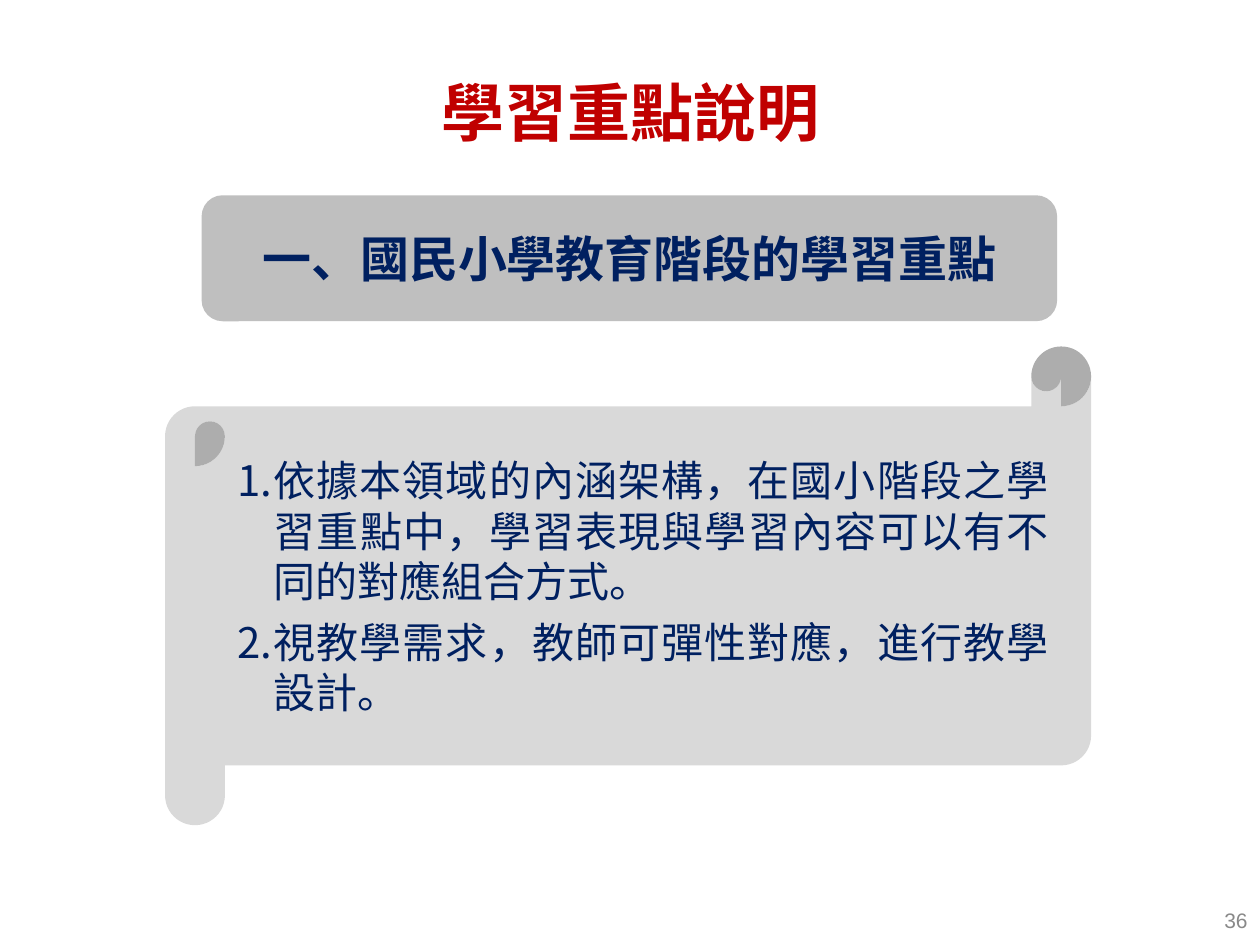
import pptx
import pptx.util
import pptx.dml.color
import pptx.enum.shapes
import pptx.enum.text
import pptx.oxml.ns
import lxml.etree

Inches = pptx.util.Inches
RGB = pptx.dml.color.RGBColor
Align = pptx.enum.text.PP_ALIGN
Kind = pptx.enum.shapes.MSO_SHAPE

RED = RGB(0xC0, 0x00, 0x00)
NAVY = RGB(0x00, 0x20, 0x60)
GRAY = RGB(0xBF, 0xBF, 0xBF)
PALE = RGB(0xD9, 0xD9, 0xD9)
DIM = RGB(0x89, 0x89, 0x89)
HAN = "Noto Sans CJK SC"

POINTS = [
    "1.依據本領域的內涵架構，在國小階段之學習重點中，學習表現與學習內容可以有不同的對應組合方式。",
    "2.視教學需求，教師可彈性對應，進行教學設計。",
]


def place(shape, left, top, width, height):
    shape.left, shape.top = Inches(left), Inches(top)
    shape.width, shape.height = Inches(width), Inches(height)


def style(para, size, color, align, bold=False, face=HAN):
    para.alignment = align
    font = para.font
    font.size = pptx.util.Pt(size)
    font.bold = bold
    font.name = face
    font.color.rgb = color
    props = para._p.pPr.find(pptx.oxml.ns.qn("a:defRPr"))
    east = lxml.etree.SubElement(props, pptx.oxml.ns.qn("a:ea"))
    east.set("typeface", face)


def hang(para, depth):
    props = para._p.get_or_add_pPr()
    props.set("marL", str(Inches(depth)))
    props.set("indent", str(-Inches(depth)))


def center(frame):
    frame.word_wrap = True
    frame.vertical_anchor = pptx.enum.text.MSO_ANCHOR.MIDDLE


def add_title(slide, text):
    title = slide.shapes.title
    place(title, 0.5, 0.3, 9, 1.25)
    frame = title.text_frame
    center(frame)
    frame.margin_left = frame.margin_right = 0
    frame.margin_top = frame.margin_bottom = 0
    frame.text = text
    para = frame.paragraphs[0]
    para.line_spacing = 0.9
    style(para, 36, RED, Align.CENTER, True)


def add_panel(slide, kind, box, fill):
    panel = slide.shapes.add_shape(kind, *map(Inches, box))
    panel.shadow.inherit = False
    panel.fill.solid()
    panel.fill.fore_color.rgb = fill
    panel.line.fill.background()
    center(panel.text_frame)
    return panel.text_frame


def add_points(frame, points):
    frame.text = "\n".join(points)
    for index, para in enumerate(frame.paragraphs):
        hang(para, 0.29)
        if index:
            para.space_before = pptx.util.Pt(6)
        style(para, 24, NAVY, Align.JUSTIFY)


def add_number(slide, text):
    box = slide.shapes.add_textbox(*map(Inches, (7.75, 7.1, 2.25, 0.4)))
    center(box.text_frame)
    box.text_frame.text = text
    style(box.text_frame.paragraphs[0], 12, DIM, Align.RIGHT, face="Arial")


def main():
    deck = pptx.Presentation()
    deck.slide_width, deck.slide_height = Inches(10), Inches(7.5)
    slide = deck.slides.add_slide(deck.slide_layouts[5])
    add_title(slide, "學習重點說明")
    head = add_panel(slide, Kind.ROUNDED_RECTANGLE, (1.6, 1.55, 6.79, 1), GRAY)
    head.text = "一、國民小學教育階段的學習重點"
    style(head.paragraphs[0], 28, NAVY, Align.CENTER, True)
    scroll = add_panel(slide, Kind.HORIZONTAL_SCROLL, (1.31, 2.75, 7.35, 3.8), PALE)
    add_points(scroll, POINTS)
    add_number(slide, "36")
    deck.save("out.pptx")


if __name__ == "__main__":
    main()
